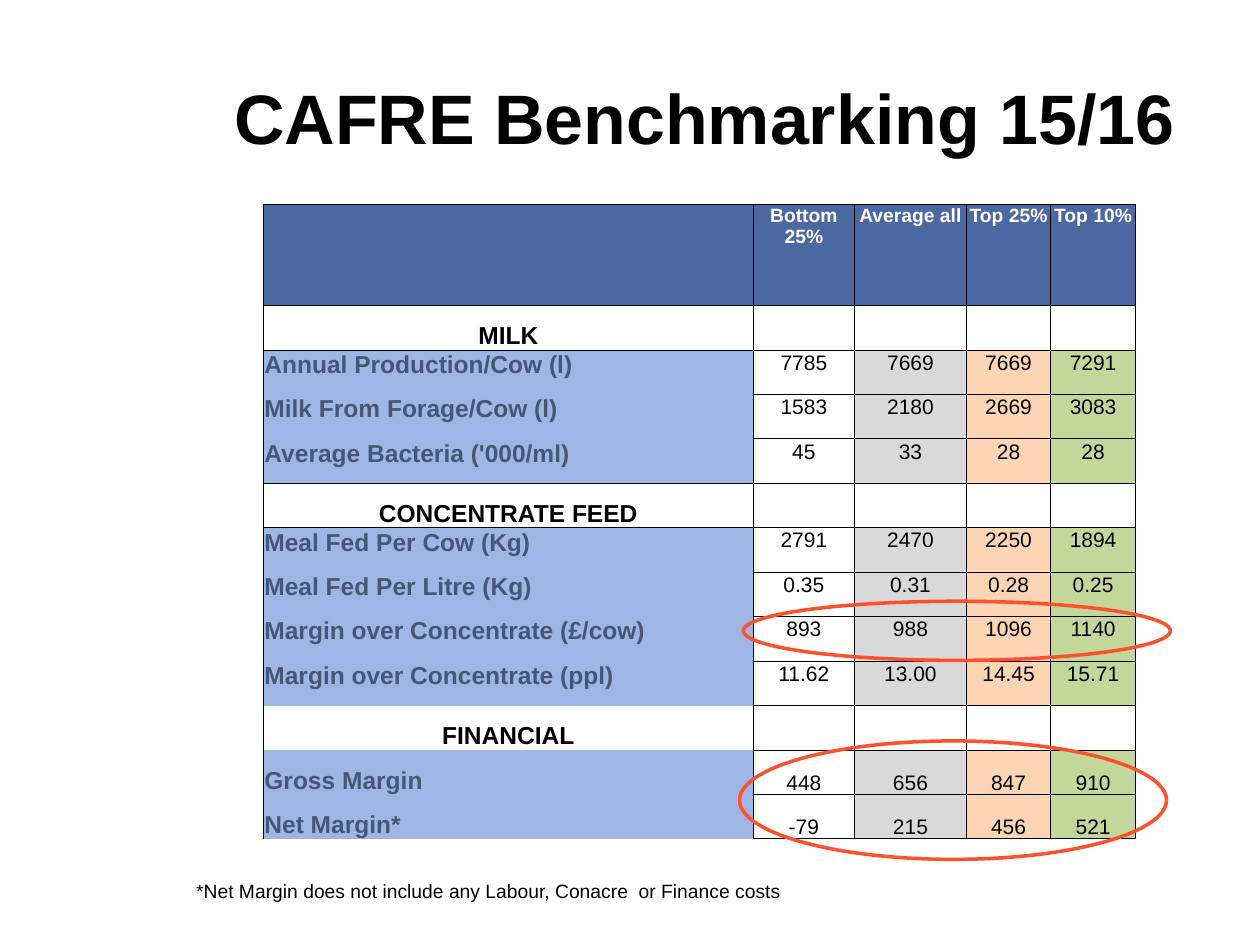
from dataclasses import dataclass

from lxml.etree import SubElement
from pptx import Presentation
from pptx.dml.color import RGBColor
from pptx.enum.shapes import MSO_SHAPE as Shape
from pptx.enum.text import MSO_ANCHOR as Anchor, PP_ALIGN as Align
from pptx.oxml.ns import qn
from pptx.util import Pt


@dataclass(frozen=True)
class Theme:
    font: str = "Arial"
    black: str = "000000"
    white: str = "FFFFFF"
    navy: str = "4C68A2"
    slate: str = "465678"
    blue: str = "9EB6E4"
    ring: str = "FF512C"
    tints: tuple = (None, "D9D9D9", "FCD5B4", "C4D79B")
    title: int = 40
    label: int = 14
    value: int = 12
    small: int = 11


THEME = Theme()
HEADS = ["Bottom 25%", "Average all", "Top 25%", "Top 10%"]
GROUPS = {
    "MILK": [
        ("Annual Production/Cow (l)", "7785", "7669", "7669", "7291"),
        ("Milk From Forage/Cow (l)", "1583", "2180", "2669", "3083"),
        ("Average Bacteria ('000/ml)", "45", "33", "28", "28"),
    ],
    "CONCENTRATE FEED": [
        ("Meal Fed Per Cow (Kg)", "2791", "2470", "2250", "1894"),
        ("Meal Fed Per Litre (Kg)", "0.35", "0.31", "0.28", "0.25"),
        ("Margin over Concentrate (£/cow)", "893", "988", "1096", "1140"),
        ("Margin over Concentrate (ppl)", "11.62", "13.00", "14.45", "15.71"),
    ],
    "FINANCIAL": [
        ("Gross Margin", "448", "656", "847", "910"),
        ("Net Margin*", "-79", "215", "456", "521"),
    ],
}
WIDTHS = [280, 57.8, 64, 48.2, 48.4]
HEAD_TALL, ROW_TALL = 58, 25.4
RULED = {0, 1, 2, 5, 6}  # row edges that carry a line in the label column


def rgb(code):
    return RGBColor.from_string(code)


def write(frame, text, size, color, bold=False, align=Align.LEFT):
    para = frame.paragraphs[0]
    para.alignment = align
    run = para.add_run()
    run.text = text
    font = run.font
    font.name, font.size, font.bold = THEME.font, Pt(size), bold
    font.color.rgb = rgb(color)


def add_text(slide, box, text, size, bold=False):
    frame = slide.shapes.add_textbox(*map(Pt, box)).text_frame
    frame.word_wrap = True
    frame.vertical_anchor = Anchor.MIDDLE
    write(frame, text, size, THEME.black, bold)


def add_ring(slide, box):
    ring = slide.shapes.add_shape(Shape.OVAL, *map(Pt, box))
    ring.shadow.inherit = False
    ring.fill.background()
    ring.line.color.rgb = rgb(THEME.ring)
    ring.line.width = Pt(2)


def set_edges(cell, sides):
    """Draw a thin line on the given sides and none on the others."""
    props = cell._tc.get_or_add_tcPr()
    for side in "LRTB":
        line = SubElement(props, qn(f"a:ln{side}"), w=str(Pt(0.5)))
        if side in sides:
            fill = SubElement(line, qn("a:solidFill"))
            SubElement(fill, qn("a:srgbClr"), val=THEME.black)
        else:
            SubElement(line, qn("a:noFill"))


def set_cell(cell, sides, fill=None, text="", low=False, **style):
    cell.margin_left = cell.margin_right = cell.margin_top = Pt(0.6)
    cell.margin_bottom = 0
    cell.vertical_anchor = Anchor.BOTTOM if low else Anchor.TOP
    set_edges(cell, sides)
    if fill:
        cell.fill.solid()
        cell.fill.fore_color.rgb = rgb(fill)
    else:
        cell.fill.background()
    if text:
        write(cell.text_frame, text, **style)


def list_rows():
    """Give each row as cells of (text, fill, style)."""
    head = dict(size=THEME.small, color=THEME.white, bold=True,
                align=Align.CENTER)
    group = dict(size=THEME.label, color=THEME.black, bold=True,
                 align=Align.CENTER, low=True)
    rows = [[(text, THEME.navy, head) for text in ["", *HEADS]]]
    for name, lines in GROUPS.items():
        rows.append([(text, None, group) for text in [name, "", "", "", ""]])
        low = name == "FINANCIAL"
        label = dict(size=THEME.label, color=THEME.slate, bold=True, low=low)
        value = dict(size=THEME.value, color=THEME.black, align=Align.CENTER,
                     low=low)
        for first, *rest in lines:
            rows.append([(first, THEME.blue, label)] + [
                (text, tint, value) for text, tint in zip(rest, THEME.tints)])
    return rows


def add_grid(slide, left, top):
    rows = list_rows()
    tall = HEAD_TALL + ROW_TALL * (len(rows) - 1)
    table = slide.shapes.add_table(
        len(rows), len(WIDTHS), Pt(left), Pt(top), Pt(sum(WIDTHS)), Pt(tall)
    ).table
    table.first_row = table.horz_banding = False
    for col, width in zip(table.columns, WIDTHS):
        col.width = Pt(width)
    for r, row in enumerate(rows):
        table.rows[r].height = Pt(ROW_TALL if r else HEAD_TALL)
        for c, (text, fill, style) in enumerate(row):
            sides = "LR"
            sides += "T" if c or r in RULED else ""
            sides += "B" if c or r + 1 in RULED else ""
            set_cell(table.cell(r, c), sides, fill, text, **style)


def main():
    deck = Presentation()
    deck.slide_width, deck.slide_height = Pt(720), Pt(540)
    slide = deck.slides.add_slide(deck.slide_layouts[6])
    add_text(slide, (126.7, 20, 669.6, 93.6), "CAFRE Benchmarking 15/16",
             THEME.title, bold=True)
    add_grid(slide, 150.5, 116.6)
    add_text(slide, (105, 498.5, 402.5, 20.9),
             "*Net Margin does not include any Labour, Conacre  or Finance costs",
             THEME.small)
    add_ring(slide, (422.6, 423.4, 244, 67.7))
    add_ring(slide, (424.8, 343.6, 244, 33.8))
    deck.save("out.pptx")


if __name__ == "__main__":
    main()
